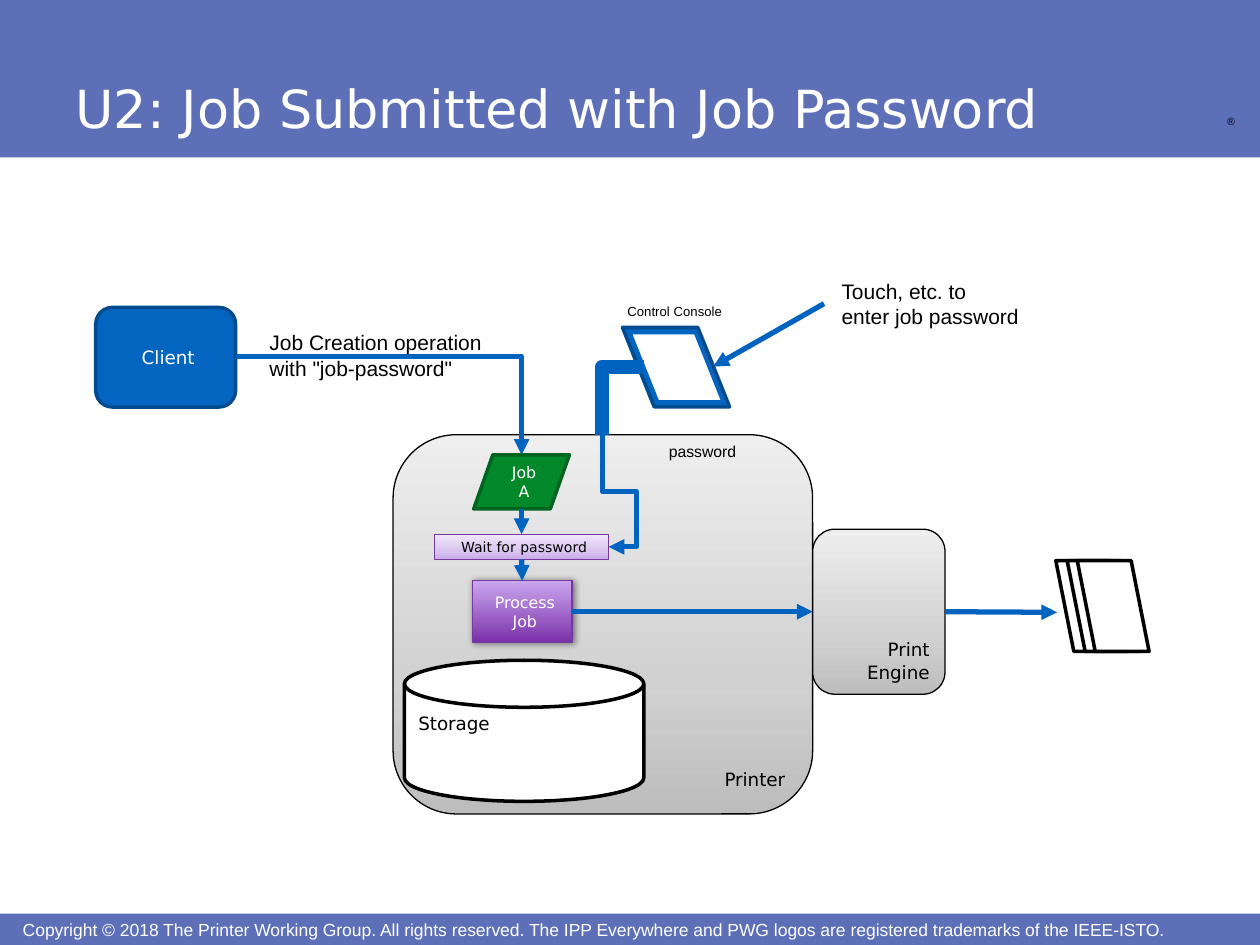
from lxml.etree import SubElement
from pptx import Presentation
from pptx.dml.color import RGBColor
from pptx.enum.shapes import MSO_CONNECTOR as Link, MSO_SHAPE as Kind
from pptx.enum.text import MSO_ANCHOR as Anchor, MSO_AUTO_SIZE as Auto, PP_ALIGN as Align
from pptx.oxml.ns import qn
from pptx.util import Inches, Pt

SANS, ARIAL = "DejaVu Sans", "Arial"
BAND, BLUE, EDGE, WIRE = "5D6FB7", "0365C0", "024B8E", "0063BF"
PURPLE, BLACK, WHITE = "753B9A", "000000", "FFFFFF"
# Gradient stops run from bottom to top
GREY = [(0, "BDBDBD"), (35, "D1D1D1"), (100, "EEEEEE")]
PALE = [(0, "CAABEA"), (35, "D9C5EF"), (100, "F1E8FA")]
DEEP = [(0, "7A31A9"), (100, "CAA6EF")]


def color(code):
    return RGBColor.from_string(code)


def box(at):
    return [Inches(v) for v in at]


def write(shape, text, size, font, ink, align=Align.LEFT,
          anchor=Anchor.TOP, pad=(0.07, 0.04), wrap=True):
    frame = shape.text_frame
    frame.text = text
    frame.word_wrap = wrap
    frame.vertical_anchor = anchor
    frame.margin_left = frame.margin_right = Inches(pad[0])
    frame.margin_top = frame.margin_bottom = Inches(pad[1])
    for para in frame.paragraphs:
        para.alignment = align
        props = para._p.get_or_add_pPr()
        props.set("marL", str(Inches(0.04)))
        props.set("indent", "0")
        for run in para.runs:
            run.font.size = Pt(size)
            run.font.name = font
            run.font.color.rgb = color(ink)


def label(parent, at, text, size, font=ARIAL, ink=BLACK, grow=True,
          pad=(0.1, 0.05), **rest):
    area = parent.add_textbox(*box(at))
    write(area, text, size, font, ink, pad=pad, **rest)
    if grow:
        area.text_frame.auto_size = Auto.SHAPE_TO_FIT_TEXT


def shade(shape, stops):
    shape.fill.gradient()
    shape.fill.gradient_angle = 90
    group = shape._element.spPr.find(qn("a:gradFill")).find(qn("a:gsLst"))
    for old in list(group):
        group.remove(old)
    for pos, code in stops:
        stop = SubElement(group, qn("a:gs"), pos=str(pos * 1000))
        SubElement(stop, qn("a:srgbClr"), val=code)


def block(parent, kind, at, fill, line=None, width=0.75, flip=False):
    shape = parent.add_shape(kind, *box(at))
    shape.shadow.inherit = False
    if isinstance(fill, list):
        shade(shape, fill)
    else:
        shape.fill.solid()
        shape.fill.fore_color.rgb = color(fill)
    if line:
        shape.line.color.rgb = color(line)
        shape.line.width = Pt(width)
    else:
        shape.line.fill.background()
    if flip:
        shape._element.spPr.xfrm.set("flipV", "1")
    return shape


def drop(shape):
    effects = shape._element.spPr.find(qn("a:effectLst"))
    cast = SubElement(effects, qn("a:outerShdw"), blurRad=str(Pt(4)),
                      dist=str(Pt(1)), dir="0", rotWithShape="0")
    ink = SubElement(cast, qn("a:srgbClr"), val=BLACK)
    SubElement(ink, qn("a:alpha"), val="50000")


def wire(parent, start, end, kind=Link.STRAIGHT, width=3, head=True):
    line = parent.add_connector(kind, *box(start + end))
    line.line.color.rgb = color(WIRE)
    line.line.width = Pt(width)
    if head:
        SubElement(line.line._get_or_add_ln(), qn("a:tailEnd"), type="triangle")
    SubElement(line._element.spPr, qn("a:effectLst"))
    return line


def elbow(parent, start, end, bends, turn=0, adjust=(), **rest):
    line = wire(parent, start, end, Link.ELBOW, **rest)
    props = line._element.spPr
    geom = props.find(qn("a:prstGeom"))
    geom.set("prst", f"bentConnector{bends + 1}")
    if turn:
        props.xfrm.set("rot", str(turn * 60000))
    for num, value in enumerate(adjust, 1):
        SubElement(geom.find(qn("a:avLst")), qn("a:gd"), name=f"adj{num}",
                   fmla=f"val {value}")


def frame(shapes):
    block(shapes, Kind.RECTANGLE, (0, 7.25, 10, 0.25), BAND)
    block(shapes, Kind.RECTANGLE, (0, 0, 10, 1.25), BAND)
    label(shapes, (9.64, 0.86, 0.27, 0.19), "®", 6, pad=(0.06, 0.06), wrap=False)
    label(shapes, (0.14, 7.29, 9.35, 0.17),
          "Copyright © 2018 The Printer Working Group. All rights reserved. "
          "The IPP Everywhere and PWG logos are registered trademarks of the IEEE-ISTO.",
          10, ink=WHITE, pad=(0, 0), anchor=Anchor.MIDDLE)
    label(shapes, (0.5, 0.05, 8.28, 1.11), "U2: Job Submitted with Job Password",
          30, SANS, WHITE, grow=False, pad=(0.06, 0.06), anchor=Anchor.BOTTOM)


def console(shapes):
    group = shapes.add_group_shape().shapes
    for at, fill, line in (((4.94, 2.6, 0.85, 0.63), BLUE, EDGE),
                           ((5, 2.64, 0.74, 0.55), WHITE, BLUE)):
        panel = block(group, Kind.PARALLELOGRAM, at, fill, line, 2, flip=True)
        panel.adjustments[0] = 0.4
    elbow(group, (5.11, 2.91), (4.78, 3.45), 1, width=8, head=False)
    label(group, (4.84, 2.36, 1.04, 0.23), "Control Console", 7.5, wrap=False)


def pages(shapes):
    group = shapes.add_group_shape().shapes
    for left in (8.38, 8.47, 8.55):
        block(group, Kind.PARALLELOGRAM, (left, 4.45, 0.57, 0.72), WHITE,
              BLACK, 2, flip=True)


def main():
    deck = Presentation()
    deck.slide_width, deck.slide_height = Inches(10), Inches(7.5)
    shapes = deck.slides.add_slide(deck.slide_layouts[6]).shapes
    frame(shapes)
    mid = {"align": Align.CENTER, "anchor": Anchor.MIDDLE}
    low = {"align": Align.RIGHT, "anchor": Anchor.BOTTOM}

    # Printer and its steps
    printer = block(shapes, Kind.ROUNDED_RECTANGLE, (3.12, 3.45, 3.33, 3.01), GREY, BLACK)
    write(printer, "Printer", 10.5, SANS, BLACK, **low)
    pages(shapes)
    process = block(shapes, Kind.FLOWCHART_PROCESS, (3.75, 4.61, 0.79, 0.49), DEEP, PURPLE)
    write(process, "Process Job", 9, SANS, WHITE, **mid)
    drop(process)
    wait = block(shapes, Kind.FLOWCHART_PROCESS, (3.45, 4.24, 1.38, 0.2), PALE, PURPLE)
    write(wait, "Wait for password", 8, SANS, BLACK, **mid)

    # Touch input and password path
    wire(shapes, (6.54, 2.41), (5.66, 2.91))
    label(shapes, (6.54, 2.16, 1.71, 0.5), "Touch, etc. to\nenter job password",
          12, wrap=False)
    elbow(shapes, (5.25, 3.87), (4.36, 3.92), 3, turn=270, adjust=(50700, 542500))
    label(shapes, (5.17, 3.46, 0.83, 0.25), "password", 9, wrap=False)

    # Client and job
    client = block(shapes, Kind.ROUNDED_RECTANGLE, (0.76, 2.44, 1.11, 0.79), BLUE, EDGE, 2)
    write(client, "Client", 10.5, SANS, WHITE, **mid)
    elbow(shapes, (1.87, 2.83), (4.14, 3.61), 1)
    label(shapes, (2, 2.57, 1.98, 0.5), 'Job Creation operation\nwith "job-password"', 12)
    job = block(shapes, Kind.FLOWCHART_DATA, (3.76, 3.61, 0.76, 0.43), "00882B", "006520", 2)
    write(job, "Job\nA", 9, SANS, WHITE, **mid)

    # Print engine
    engine = block(shapes, Kind.ROUNDED_RECTANGLE, (6.45, 4.2, 1.05, 1.31), GREY, BLACK)
    write(engine, "Print\nEngine", 10.5, SANS, BLACK, **low)

    # Arrows between the steps
    wire(shapes, (4.14, 4.04), (4.14, 4.24)).end_connect(wait, 0)
    step = wire(shapes, (4.14, 4.44), (4.14, 4.61))
    step.begin_connect(wait, 2)
    step.end_connect(process, 0)
    feed = wire(shapes, (4.54, 4.86), (6.45, 4.86))
    feed.begin_connect(process, 3)
    feed.end_connect(engine, 1)
    wire(shapes, (7.5, 4.86), (8.39, 4.86)).begin_connect(engine, 3)

    console(shapes)

    # Storage
    disk = block(shapes, Kind.FLOWCHART_MAGNETIC_DISK, (3.21, 5.24, 1.9, 1.12), WHITE, BLACK, 2)
    write(disk, "Storage", 10.5, SANS, BLACK)
    deck.save("out.pptx")


if __name__ == "__main__":
    main()
